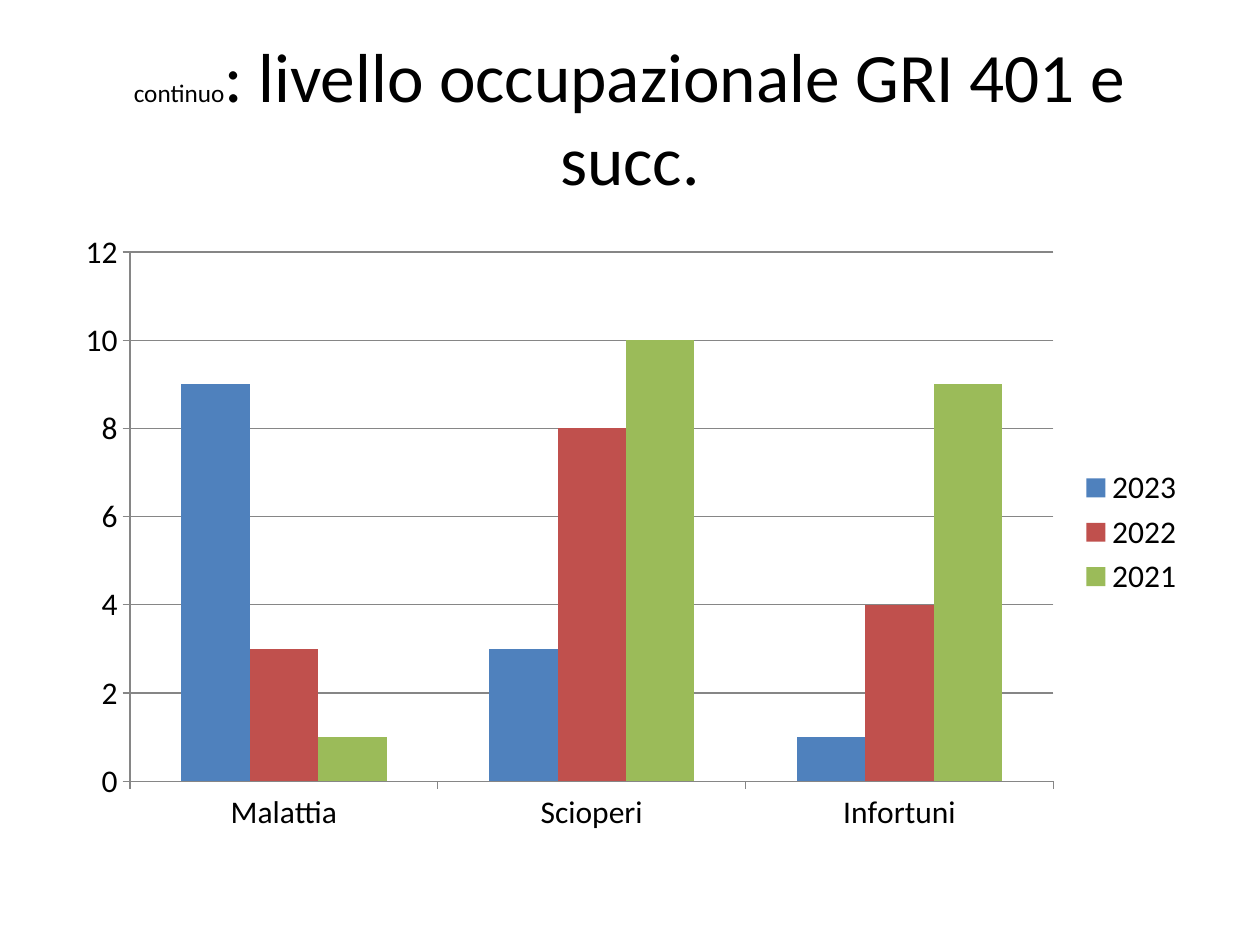
from pptx import Presentation
from pptx import util as u
from pptx.chart.data import CategoryChartData
from pptx.dml.color import RGBColor
from pptx.enum import chart as ch, text

FONT = "Calibri"
BLACK, GREY = "000000", "868686"
TITLE = [("continuo", 14.4), (": livello occupazionale GRI 401 e succ.", 39.6)]
CATEGORIES = ["Malattia", "Scioperi", "Infortuni"]
SERIES = [
    ("2023", (9, 3, 1), "4F81BD"),
    ("2022", (3, 8, 4), "C0504D"),
    ("2021", (1, 10, 9), "9BBB59"),
]
W, H = 10, 7.5
MARGIN = 0.05 * W
TITLE_BOX = [u.Inches(v) for v in (MARGIN, 0.04 * H, W - 2 * MARGIN, H / 6)]
CHART_BOX = [u.Inches(v) for v in (MARGIN, 1.75, W - 2 * MARGIN, 0.66 * H)]


def style_font(font, size, color=BLACK):
    font.name = FONT
    font.size = u.Pt(size)
    font.color.rgb = RGBColor.from_string(color)


def add_title(s):
    sp = s.shapes.title
    sp.left, sp.top, sp.width, sp.height = TITLE_BOX
    tf = sp.text_frame
    tf.word_wrap = True
    tf.auto_size = text.MSO_AUTO_SIZE.NONE
    tf.vertical_anchor = text.MSO_ANCHOR.MIDDLE
    p = tf.paragraphs[0]
    p.alignment = text.PP_ALIGN.CENTER
    for words, size in TITLE:
        r = p.add_run()
        r.text = words
        style_font(r.font, size)


def add_absence_chart(s):
    data = CategoryChartData()
    data.categories = CATEGORIES
    for name, values, _ in SERIES:
        data.add_series(name, values)
    chart = s.shapes.add_chart(
        ch.XL_CHART_TYPE.COLUMN_CLUSTERED, *CHART_BOX, data).chart
    style_font(chart.font, 18)
    chart.has_title = False
    chart.has_legend = True
    chart.legend.position = ch.XL_LEGEND_POSITION.RIGHT
    chart.legend.include_in_layout = False

    plot = chart.plots[0]
    plot.gap_width = 150
    plot.vary_by_categories = False
    for series, (_, _, color) in zip(plot.series, SERIES):
        series.format.fill.solid()
        series.format.fill.fore_color.rgb = RGBColor.from_string(color)

    chart.value_axis.has_major_gridlines = True
    axes = chart.category_axis, chart.value_axis
    for axis in axes:
        axis.major_tick_mark = ch.XL_TICK_MARK.OUTSIDE
    for part in (*axes, chart.value_axis.major_gridlines):
        part.format.line.color.rgb = RGBColor.from_string(GREY)
        part.format.line.width = u.Pt(0.75)


prs = Presentation()
prs.slide_width, prs.slide_height = u.Inches(W), u.Inches(H)
s = prs.slides.add_slide(prs.slide_layouts[5])
add_title(s)
add_absence_chart(s)
prs.save("out.pptx")
